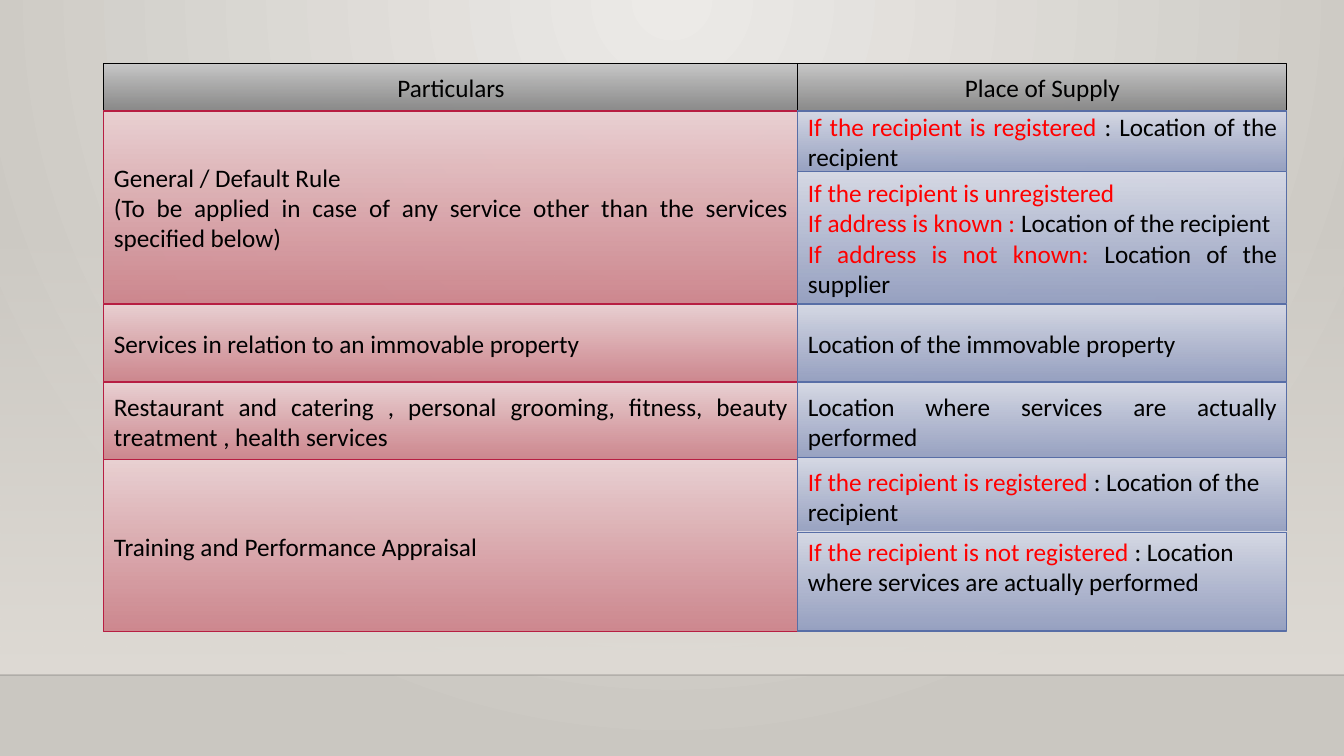
from lxml import etree
from pptx import Presentation, util as u
from pptx.dml.color import RGBColor
from pptx.enum import shapes, text
from pptx.oxml.ns import qn

# Each paragraph is a tuple of (words, colour name) runs.
HEADERS = ("Particulars", "Place of Supply")
REGISTERED = (("If the recipient is registered ", "condition"),
              (": Location of the recipient", "ink"))

# top, height, paragraphs
PARTICULARS = [
    (111, 193, [(("General / Default Rule", "ink"),),
                (("(To be applied in case of any service other than the "
                  "services specified below)", "ink"),)]),
    (304, 78, [(("Services in relation to an immovable property", "ink"),)]),
    (383, 77, [(("Restaurant and catering , personal grooming, fitness, beauty "
                 "treatment , health services", "ink"),)]),
    (460, 172, [(("Training and Performance Appraisal", "ink"),)]),
]
# top, height, paragraphs, alignment, extra space below the text
PLACES = [
    (111, 61, [REGISTERED], "JUSTIFY", 0),
    (172, 132, [(("If the recipient is unregistered", "condition"),),
                (("If address is known : ", "condition"),
                 ("Location of the recipient", "ink")),
                (("If address is not known: ", "condition"),
                 ("Location of the supplier", "ink"))], "JUSTIFY", 0),
    (304, 78, [(("Location of the immovable property", "ink"),)], "JUSTIFY", 0),
    (383, 77, [(("Location where services are actually performed", "ink"),)], "JUSTIFY", 0),
    (458, 77, [REGISTERED], "LEFT", 0),
    (532, 99, [(("If the recipient is not registered ", "condition"),
                (": Location where services are actually performed", "ink"))], "LEFT", 30),
]

THEME = {
    "font": "Calibri", "size": 18,
    "ink": "000000", "condition": "FF0000",
    "wall": ("ECEAE7", "CAC7C1"), "glow": ("DFDBD5", "DFDBD5"), "floor": "000001",
    "header": ("C8C8C8", "848484", "000000"),
    "particulars": ("EAD1D3", "CD828A", "B71E42"),
    "places": ("D6D9E5", "929DC0", "586EA6"),
}
SLIDE_W, SLIDE_H, FLOOR_TOP = 1344, 756, 675
HEADER_TOP, HEADER_H = 64, 47
COLUMNS = ((104, 694), (798, 489))  # left, width
INSET = 5


def px(length):
    return u.Emu(round(length * 914400 / 100.8))


def rgb(code):
    return RGBColor.from_string(code)


def set_gradient(fill, colours):
    fill.gradient()
    for stop, code in zip(fill.gradient_stops, colours):
        stop.color.rgb = rgb(code)


def set_opacities(shape, percents):
    """Apply opacities to the shape's colours, in the order they are stored."""
    colours = list(shape.element.spPr.iter(qn("a:srgbClr")))
    for colour, percent in zip(colours, percents):
        if percent < 100:
            etree.SubElement(colour, qn("a:alpha"), val=str(percent * 1000))


def add_panel(slide, left, top, width, height, colours, opacities):
    panel = slide.shapes.add_shape(shapes.MSO_SHAPE.RECTANGLE,
                                   px(left), px(top), px(width), px(height))
    panel.shadow.inherit = False
    set_gradient(panel.fill, colours)
    panel.fill.gradient_angle = 270
    set_opacities(panel, opacities)
    panel.line.fill.background()
    return panel


def add_cell(slide, column, top, height, kind, paragraphs, align, below=0):
    start, end, border = THEME[kind]
    left, width = COLUMNS[column]
    cell = add_panel(slide, left, top, width, height, (start, end), (100, 92))
    cell.line.color.rgb = rgb(border)
    cell.line.width = u.Pt(0.75)
    frame = cell.text_frame
    frame.word_wrap = True
    frame.vertical_anchor = text.MSO_ANCHOR.MIDDLE
    frame.margin_bottom = px(INSET + below)
    for index, runs in enumerate(paragraphs):
        paragraph = frame.add_paragraph() if index else frame.paragraphs[0]
        paragraph.alignment = text.PP_ALIGN[align]
        paragraph.font.name = THEME["font"]
        paragraph.font.size = u.Pt(THEME["size"])
        for words, colour in runs:
            run = paragraph.add_run()
            run.text = words
            run.font.color.rgb = rgb(THEME[colour])


def add_backdrop(slide):
    set_gradient(slide.background.fill, THEME["wall"])
    gradient = next(slide.element.iter(qn("a:gradFill")))
    gradient.remove(gradient.find(qn("a:lin")))
    circle = etree.SubElement(gradient, qn("a:path"), {"path": "circle"})
    etree.SubElement(circle, qn("a:fillToRect"), l="43000", t="0", r="43000", b="100000")

    glow_top = 223
    add_panel(slide, 0, glow_top, SLIDE_W, FLOOR_TOP - glow_top, THEME["glow"], (0, 100))
    floor = slide.shapes.add_connector(shapes.MSO_CONNECTOR.STRAIGHT,
                                       0, px(FLOOR_TOP), px(SLIDE_W), px(FLOOR_TOP))
    floor.line.color.rgb = rgb(THEME["floor"])
    floor.line.width = u.Pt(1)
    set_opacities(floor, (20,))
    etree.SubElement(floor.element.spPr, qn("a:effectLst"))


def main():
    deck = Presentation()
    deck.slide_width, deck.slide_height = px(SLIDE_W), px(SLIDE_H)
    slide = deck.slides.add_slide(deck.slide_layouts[6])
    add_backdrop(slide)
    for column, title in enumerate(HEADERS):
        add_cell(slide, column, HEADER_TOP, HEADER_H, "header", [((title, "ink"),)], "CENTER")
    for top, height, paragraphs in PARTICULARS:
        add_cell(slide, 0, top, height, "particulars", paragraphs, "JUSTIFY")
    for top, height, paragraphs, align, below in PLACES:
        add_cell(slide, 1, top, height, "places", paragraphs, align, below)
    deck.save("out.pptx")


if __name__ == "__main__":
    main()
